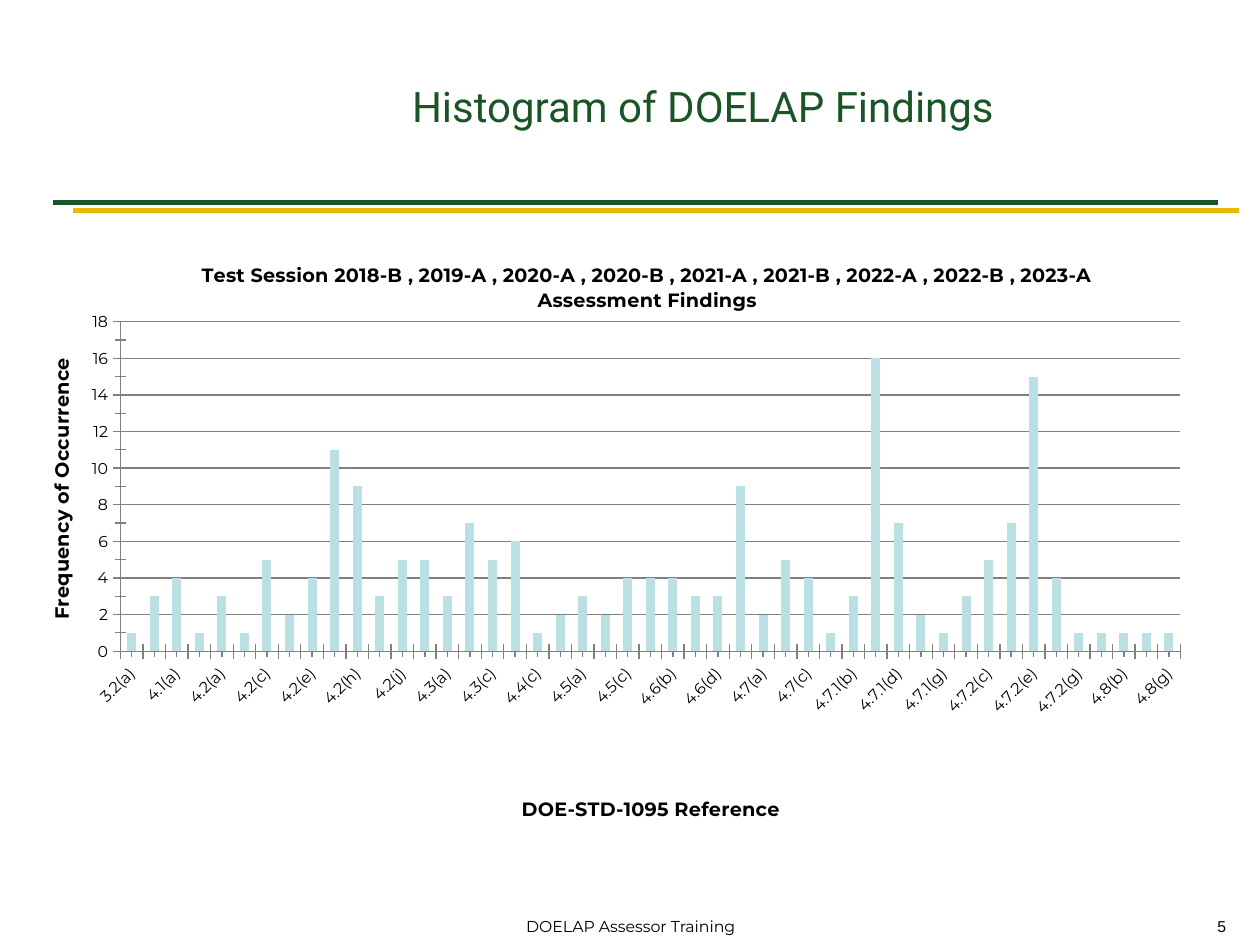
from dataclasses import dataclass

from lxml import etree
from pptx import Presentation
from pptx.chart.data import CategoryChartData
from pptx.dml.color import RGBColor
from pptx.enum.chart import XL_CHART_TYPE, XL_TICK_MARK
from pptx.enum.shapes import MSO_CONNECTOR
from pptx.enum.text import MSO_ANCHOR, PP_ALIGN
from pptx.oxml.ns import qn
from pptx.util import Inches, Pt

COLUMN = XL_CHART_TYPE.COLUMN_CLUSTERED
CROSS, OUTSIDE = XL_TICK_MARK.CROSS, XL_TICK_MARK.OUTSIDE
STRAIGHT = MSO_CONNECTOR.STRAIGHT
MIDDLE = MSO_ANCHOR.MIDDLE
LEFT, CENTER, RIGHT = PP_ALIGN.LEFT, PP_ALIGN.CENTER, PP_ALIGN.RIGHT

COLORS = {"green": "1B5527", "gold": "E8BB00", "text": "000000",
          "bar": "BBE0E3", "axis": "808080"}

# Clause group, then the letter and count of each finding in it
FINDINGS = {
    "3.2": {"a": 1, "f": 3},
    "4.1": {"a": 4, "b": 1},
    "4.2": {"a": 3, "b": 1, "c": 5, "d": 2, "e": 4, "g": 11, "h": 9,
            "i": 3, "j": 5, "k": 5},
    "4.3": {"a": 3, "b": 7, "c": 5},
    "4.4": {"b": 6, "c": 1, "e": 2},
    "4.5": {"a": 3, "b": 2, "c": 4},
    "4.6": {"a": 4, "b": 4, "c": 3, "d": 3, "f": 9},
    "4.7": {"a": 2, "b": 5, "c": 4},
    "4.7.1": {"a": 1, "b": 3, "c": 16, "d": 7, "e": 2, "g": 1},
    "4.7.2": {"b": 3, "c": 5, "d": 7, "e": 15, "f": 4, "g": 1},
    "4.7.3": {"": 1},
    "4.8": {"b": 1, "f": 1, "g": 1},
}


@dataclass
class Rule:
    left: float
    top: float
    color: str


@dataclass
class Label:
    text: str
    left: float
    width: float
    font: str
    align: PP_ALIGN


RULES = [Rule(0.42, 1.61, "green"), Rule(0.58, 1.67, "gold")]
LABELS = [Label("5", 7.83, 2, "Arial", RIGHT),
          Label("DOELAP Assessor Training", 3.42, 3.17, "Montserrat", CENTER)]


def rgb(name: str) -> RGBColor:
    return RGBColor.from_string(COLORS[name])


def style(font, face: str, size: float, color: str, bold: bool = False) -> None:
    font.name, font.size, font.bold = face, Pt(size), bold
    font.color.rgb = rgb(color)


def draw_rule(slide, rule: Rule) -> None:
    top = Inches(rule.top)
    line = slide.shapes.add_connector(
        STRAIGHT, Inches(rule.left), top, Inches(rule.left + 9.25), top)
    line.line.color.rgb = rgb(rule.color)
    line.line.width = Pt(3)
    etree.SubElement(line._element.spPr, qn("a:effectLst"))


def draw_label(slide, label: Label) -> None:
    box = slide.shapes.add_textbox(
        Inches(label.left), Inches(7.23), Inches(label.width), Inches(0.25))
    box.text_frame.word_wrap = True
    para = box.text_frame.paragraphs[0]
    para.text, para.alignment = label.text, label.align
    style(para.font, label.font, 9, "text")


def place(parent, x: float, y: float, w: float = 0, h: float = 0) -> None:
    """Give a chart title or the plot area a manual layout."""
    layout = parent.find(qn("c:layout"))
    if layout is None:
        layout = etree.Element(qn("c:layout"))
        text = parent.find(qn("c:tx"))
        parent.insert(0 if text is None else 1, layout)
    manual = etree.SubElement(layout, qn("c:manualLayout"))
    items = {"xMode": "edge", "yMode": "edge", "x": x, "y": y}
    if w:
        items = {"layoutTarget": "inner", **items, "w": w, "h": h}
    for tag, value in items.items():
        etree.SubElement(manual, qn(f"c:{tag}")).set("val", str(value))


def write_title(frame, text: str) -> None:
    frame.text = text
    for para in frame.paragraphs:
        style(para.font, "Montserrat", 11, "text", True)


def format_axis(axis, title: str, minor: XL_TICK_MARK) -> None:
    write_title(axis.axis_title.text_frame, title)
    axis.major_tick_mark, axis.minor_tick_mark = CROSS, minor
    axis.format.line.color.rgb = rgb("axis")
    style(axis.tick_labels.font, "Montserrat", 9, "text")


def draw_chart(slide) -> None:
    data = CategoryChartData()
    data.categories = [f"{group}({mark})" if mark else group
                       for group, marks in FINDINGS.items() for mark in marks]
    data.add_series("Series 1", [count for marks in FINDINGS.values()
                                 for count in marks.values()])
    chart = slide.shapes.add_chart(
        COLUMN, Inches(0.25), Inches(1.83), Inches(9.42), Inches(5.17),
        data).chart
    style(chart.font, "Montserrat", 10, "text")
    chart.has_legend = False
    write_title(chart.chart_title.text_frame,
                "Test Session 2018-B , 2019-A , 2020-A , 2020-B , 2021-A , "
                "2021-B , 2022-A , 2022-B , 2023-A\nAssessment Findings")

    plot = chart.plots[0]
    plot.gap_width, plot.vary_by_categories = 150, False
    fill = plot.series[0].format.fill
    fill.solid()
    fill.fore_color.rgb = rgb("bar")

    cat, val = chart.category_axis, chart.value_axis
    format_axis(cat, "DOE-STD-1095 Reference", OUTSIDE)
    format_axis(val, "Frequency of Occurrence", CROSS)
    val.minimum_scale, val.maximum_scale = 0, 18
    val.major_unit, val.minor_unit = 2, 1
    val.major_gridlines.format.line.color.rgb = rgb("axis")

    root = chart.element
    spots = [(0.14, 0.04), (0.41, 0.86), (0.01, 0.19)]
    for title, spot in zip(root.iter(qn("c:title")), spots):
        place(title, *spot)
    place(next(root.iter(qn("c:plotArea"))), 0.075, 0.14, 0.893, 0.506)

    axis = next(root.iter(qn("c:catAx")))
    body = axis.find(qn("c:txPr")).find(qn("a:bodyPr"))
    body.set("rot", "-2700000")
    body.set("vert", "horz")
    last = axis.find(qn("c:noMultiLvlLbl"))
    for tag, step in (("tickLblSkip", "2"), ("tickMarkSkip", "1")):
        skip = etree.Element(qn(f"c:{tag}"))
        skip.set("val", step)
        last.addprevious(skip)


def main() -> None:
    deck = Presentation()
    deck.slide_width, deck.slide_height = Inches(10), Inches(7.5)
    slide = deck.slides.add_slide(deck.slide_layouts[5])
    title = slide.shapes.title
    title.left, title.top = Inches(3.17), Inches(0.17)
    title.width, title.height = Inches(6.33), Inches(1.33)
    title.text_frame.vertical_anchor = MIDDLE
    para = title.text_frame.paragraphs[0]
    para.text, para.alignment = "Histogram of DOELAP Findings", LEFT
    style(para.font, "Roboto", 24, "green")

    for rule in RULES:
        draw_rule(slide, rule)
    for label in LABELS:
        draw_label(slide, label)
    draw_chart(slide)
    deck.save("out.pptx")


if __name__ == "__main__":
    main()
